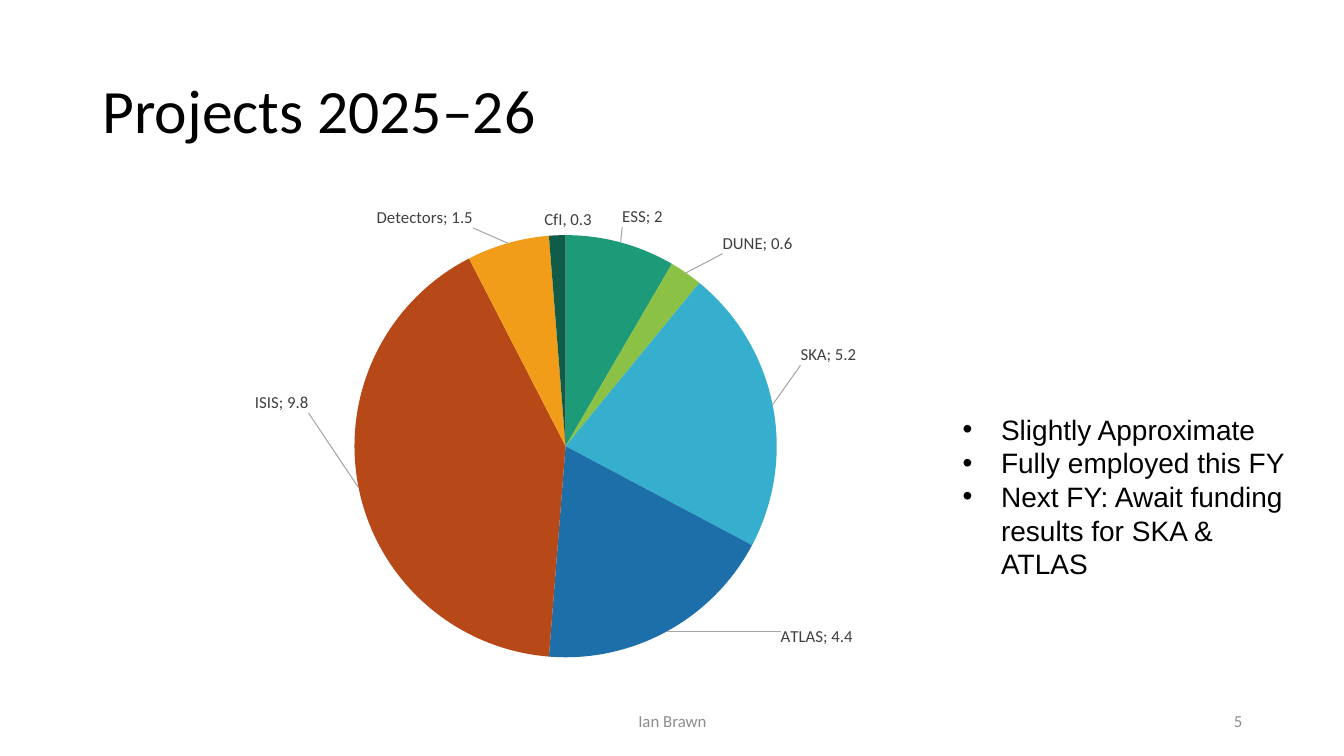
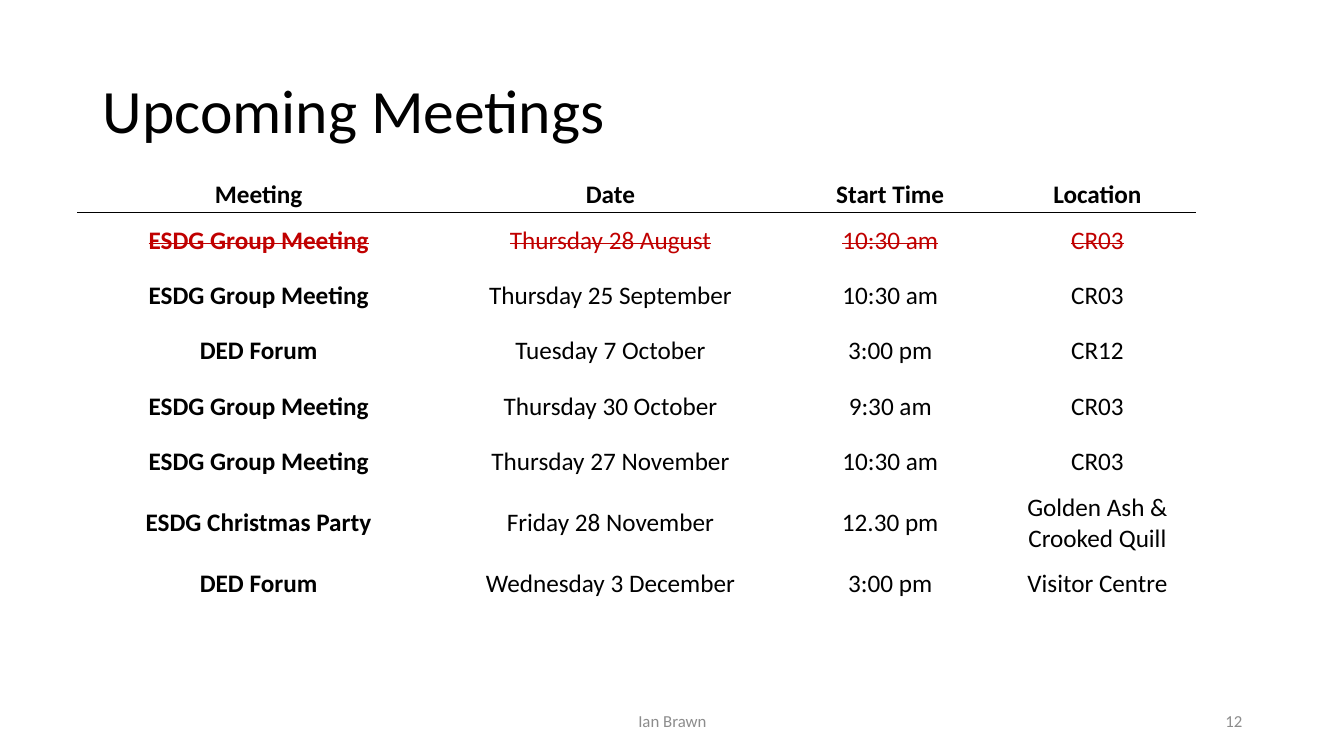
from dataclasses import dataclass
from lxml import etree
from pptx import Presentation
from pptx.chart.data import CategoryChartData
from pptx.dml.color import RGBColor
from pptx.enum.chart import XL_CHART_TYPE
from pptx.enum.text import MSO_ANCHOR, PP_ALIGN
from pptx.oxml import parse_xml
from pptx.oxml.ns import qn
from pptx.slide import Slide
from pptx.text.text import Font
from pptx.util import Inches, Pt

PIE = XL_CHART_TYPE.PIE
MID, TOP = MSO_ANCHOR.MIDDLE, MSO_ANCHOR.TOP
LEFT, CENTER, RIGHT = PP_ALIGN.LEFT, PP_ALIGN.CENTER, PP_ALIGN.RIGHT
SANS, BODY = "Calibri", "Arial"
CHART_NS = "http://schemas.openxmlformats.org/drawingml/2006/chart"
DRAW_NS = "http://schemas.openxmlformats.org/drawingml/2006/main"

COLORS = {
    "ink": "000000",
    "muted": "8C8C8C",
    "label": "404040",
    "leader": "A6A6A6",
    "dropped": "C00000",
    "green": "1D9A78",
    "lime": "8BC145",
    "sky": "36AFCE",
    "blue": "1D6FA9",
    "rust": "B74919",
    "amber": "F19D19",
    "pine": "115C48",
}


@dataclass(frozen=True)
class Style:
    size: float
    color: str = "ink"
    face: str = SANS
    bold: bool = False
    strike: bool = False


@dataclass(frozen=True)
class Box:
    left: float
    top: float
    width: float
    height: float


@dataclass(frozen=True)
class Slice:
    name: str
    value: float
    color: str
    dx: float
    dy: float
    gap: str = "; "


@dataclass(frozen=True)
class Meeting:
    name: str
    date: str
    start: str
    place: str
    dropped: bool = False


TITLE = Style(44)
FOOTER = Style(12, "muted")
NOTE = Style(20, face=BODY)
LABEL = Style(12, "label")

SLICES = [
    Slice("ESS", 2, "green", 0, -0.02),
    Slice("DUNE", 0.6, "lime", 0.03, -0.03),
    Slice("SKA", 5.2, "sky", 0.02, -0.08),
    Slice("ATLAS", 4.4, "blue", 0.1, -0.02),
    Slice("ISIS", 9.8, "rust", -0.04, -0.2),
    Slice("Detectors", 1.5, "amber", -0.03, -0.02),
    Slice("CfI", 0.3, "pine", 0.01, 0, ", "),
]
NOTES = [
    "Slightly Approximate",
    "Fully employed this FY",
    "Next FY: Await funding results for SKA & ATLAS",
]
GROUP, FORUM = "ESDG Group Meeting", "DED Forum"
HEADS = ["Meeting", "Date", "Start Time", "Location"]
WIDTHS = [3.59, 3.39, 2.16, 1.95]
MEETINGS = [
    Meeting(GROUP, "Thursday 28 August", "10:30 am", "CR03", True),
    Meeting(GROUP, "Thursday 25 September", "10:30 am", "CR03"),
    Meeting(FORUM, "Tuesday 7 October", "3:00 pm", "CR12"),
    Meeting(GROUP, "Thursday 30 October", "9:30 am", "CR03"),
    Meeting(GROUP, "Thursday 27 November", "10:30 am", "CR03"),
    Meeting("ESDG Christmas Party", "Friday 28 November", "12.30 pm",
            "Golden Ash &\nCrooked Quill"),
    Meeting(FORUM, "Wednesday 3 December", "3:00 pm", "Visitor Centre"),
]


def rgb(name: str) -> RGBColor:
    return RGBColor.from_string(COLORS[name])


def set_font(font: Font, style: Style) -> None:
    font.size = Pt(style.size)
    font.name = style.face
    font.bold = style.bold
    font.color.rgb = rgb(style.color)
    if style.strike:
        font._element.set("strike", "sngStrike")


def add_bullet(para) -> None:
    props = para._p.get_or_add_pPr()
    props.set("marL", str(Inches(0.38)))
    props.set("indent", str(-Inches(0.38)))
    etree.SubElement(props, qn("a:buFont")).set("typeface", BODY)
    etree.SubElement(props, qn("a:buChar")).set("char", "•")


def add_text(slide: Slide, box: Box, lines: list[str], style: Style,
             align=LEFT, anchor=MID, space: float = 1.0,
             bullet: bool = False) -> None:
    shape = slide.shapes.add_textbox(Inches(box.left), Inches(box.top),
                                     Inches(box.width), Inches(box.height))
    frame = shape.text_frame
    frame.word_wrap = True
    frame.vertical_anchor = anchor
    for i, line in enumerate(lines):
        para = frame.add_paragraph() if i else frame.paragraphs[0]
        para.text = line
        para.alignment = align
        para.line_spacing = space
        if bullet:
            add_bullet(para)
        set_font(para.font, style)


def add_page(deck, title: str, number: int) -> Slide:
    slide = deck.slides.add_slide(deck.slide_layouts[6])
    add_text(slide, Box(0.92, 0.4, 11.5, 1.45), [title], TITLE, space=0.9)
    add_text(slide, Box(4.42, 6.95, 4.5, 0.4), ["Ian Brawn"], FOOTER, CENTER)
    add_text(slide, Box(9.42, 6.95, 3, 0.4), [str(number)], FOOTER, RIGHT)
    return slide


def label_xml(index: int, part: Slice):
    return parse_xml(
        f'<c:dLbl xmlns:c="{CHART_NS}"><c:idx val="{index}"/>'
        f'<c:layout><c:manualLayout><c:x val="{part.dx}"/>'
        f'<c:y val="{part.dy}"/></c:manualLayout></c:layout>'
        '<c:dLblPos val="outEnd"/><c:showLegendKey val="0"/>'
        '<c:showVal val="1"/><c:showCatName val="1"/>'
        '<c:showSerName val="0"/><c:showPercent val="0"/>'
        '<c:showBubbleSize val="0"/>'
        f'<c:separator>{part.gap}</c:separator></c:dLbl>')


def place_plot(chart, box: Box) -> None:
    area = chart._chartSpace.chart.plotArea
    for old in area.findall(qn("c:layout")):
        area.remove(old)
    area.insert(0, parse_xml(
        f'<c:layout xmlns:c="{CHART_NS}"><c:manualLayout>'
        '<c:layoutTarget val="inner"/><c:xMode val="edge"/>'
        f'<c:yMode val="edge"/><c:x val="{box.left}"/><c:y val="{box.top}"/>'
        f'<c:w val="{box.width}"/><c:h val="{box.height}"/>'
        '</c:manualLayout></c:layout>'))


def add_pie(slide: Slide, box: Box) -> None:
    data = CategoryChartData()
    data.categories = [part.name for part in SLICES]
    data.add_series("Series 1", [part.value for part in SLICES])
    chart = slide.shapes.add_chart(
        PIE, Inches(box.left), Inches(box.top), Inches(box.width),
        Inches(box.height), data).chart
    chart.has_title = False
    chart.has_legend = False
    set_font(chart.font, LABEL)
    place_plot(chart, Box(0.05, 0.07, 0.91, 0.88))
    chart.plots[0].vary_by_categories = True
    series = chart.plots[0].series[0]
    labels = series.data_labels
    set_font(labels.font, LABEL)
    labels.show_value = True
    labels.show_category_name = True
    for i, part in enumerate(SLICES):
        fill = series.points[i].format.fill
        fill.solid()
        fill.fore_color.rgb = rgb(part.color)
        labels._element.insert(i, label_xml(i, part))
    labels._element.append(parse_xml(
        f'<c:leaderLines xmlns:c="{CHART_NS}" xmlns:a="{DRAW_NS}"><c:spPr>'
        f'<a:ln w="{Pt(0.75)}"><a:solidFill>'
        f'<a:srgbClr val="{COLORS["leader"]}"/>'
        '</a:solidFill></a:ln></c:spPr></c:leaderLines>'))


def add_rule(cell, side: str) -> None:
    cell._tc.get_or_add_tcPr().insert(0, parse_xml(
        f'<a:{side} xmlns:a="{DRAW_NS}" w="{Pt(1)}"><a:solidFill>'
        f'<a:srgbClr val="{COLORS["ink"]}"/></a:solidFill></a:{side}>'))


def fill_cell(cell, text: str, style: Style) -> None:
    cell.fill.background()
    cell.vertical_anchor = MID
    cell.margin_left = cell.margin_right = Inches(0.03)
    cell.margin_top = cell.margin_bottom = Inches(0.03)
    para = cell.text_frame.paragraphs[0]
    para.text = text
    para.alignment = CENTER
    set_font(para.font, style)


def add_grid(slide: Slide, left: float, top: float) -> None:
    heights = [0.34] + [0.55] * len(MEETINGS)
    table = slide.shapes.add_table(
        len(heights), len(WIDTHS), Inches(left), Inches(top),
        Inches(sum(WIDTHS)), Inches(sum(heights))).table
    table.first_row = False
    table.horz_banding = False
    for row, height in zip(table.rows, heights):
        row.height = Inches(height)
    for c, width in enumerate(WIDTHS):
        table.columns[c].width = Inches(width)
        fill_cell(table.cell(0, c), HEADS[c], Style(18, bold=True))
        add_rule(table.cell(0, c), "lnB")
        add_rule(table.cell(1, c), "lnT")
    for r, item in enumerate(MEETINGS, 1):
        color = "dropped" if item.dropped else "ink"
        texts = [item.name, item.date, item.start, item.place]
        for c, text in enumerate(texts):
            style = Style(18, color, bold=c == 0, strike=item.dropped)
            fill_cell(table.cell(r, c), text, style)


def main() -> None:
    deck = Presentation()
    deck.slide_width = Inches(13.33)
    deck.slide_height = Inches(7.5)
    work = add_page(deck, "Projects 2025–26", 5)
    add_pie(work, Box(0.06, 2, 10.99, 4.76))
    add_text(work, Box(9.45, 4.04, 3.48, 1.78), NOTES, NOTE,
             anchor=TOP, bullet=True)
    plan = add_page(deck, "Upcoming Meetings", 12)
    add_grid(plan, 0.77, 1.75)
    deck.save("out.pptx")


if __name__ == "__main__":
    main()
